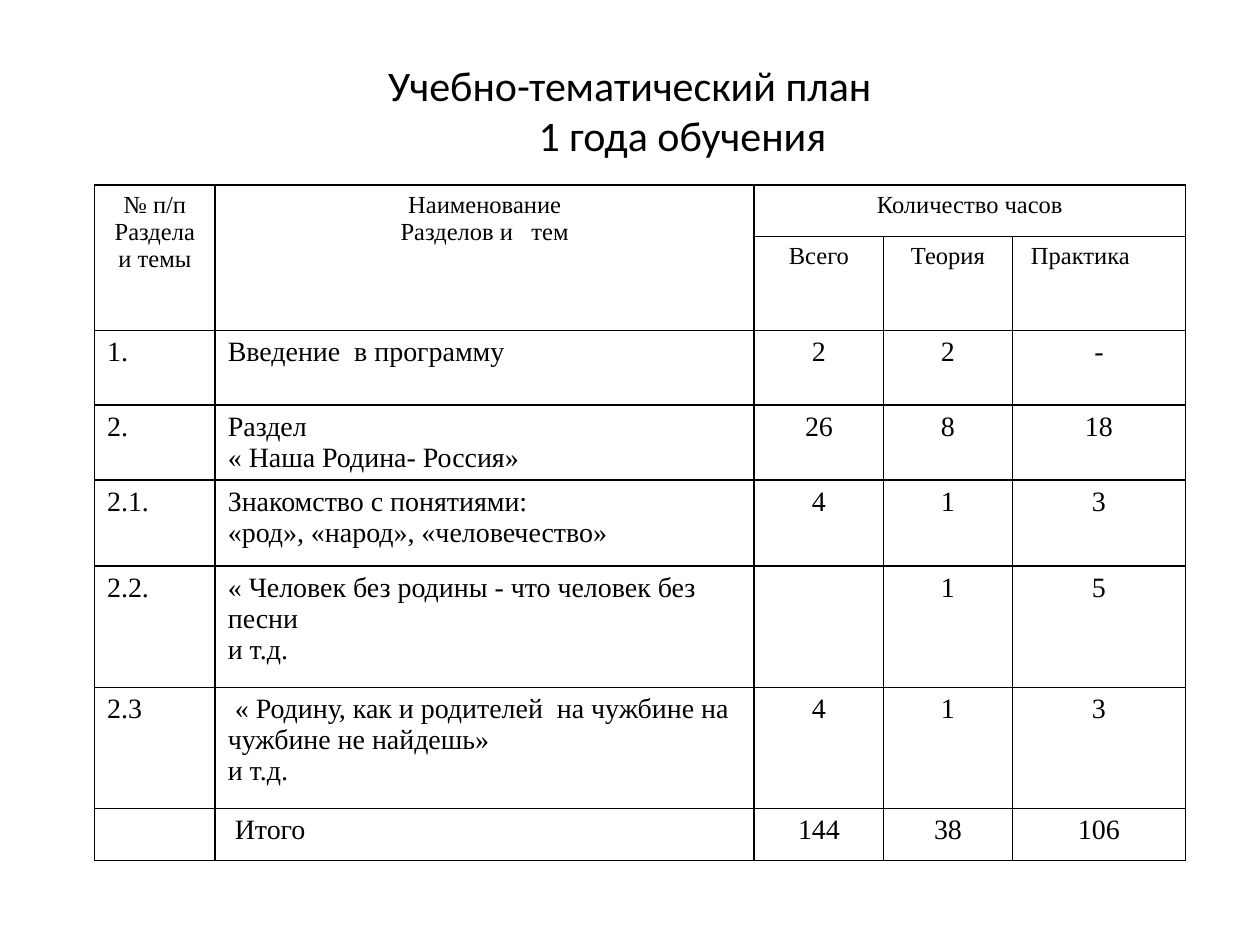
from lxml import etree
from pptx import Presentation
from pptx.dml.color import RGBColor
from pptx.enum.text import MSO_ANCHOR, PP_ALIGN
from pptx.oxml.ns import qn
from pptx.util import Pt

CENTER, LEFT = PP_ALIGN.CENTER, PP_ALIGN.LEFT
MIDDLE = MSO_ANCHOR.MIDDLE
BLACK = RGBColor(0, 0, 0)
TITLE_FONT, TABLE_FONT = "Calibri", "Times New Roman"
HEADER_SIZE, BODY_SIZE = 14, 16
TITLE_ONLY = 5

COLUMN_WIDTHS = [69, 308, 74, 73.5, 99]
ROW_HEIGHTS = [29.5, 53.5, 42.6, 42.8, 49.2, 69.3, 69.3, 29.6]
HEADER_ROWS = 2
MERGES = [((0, 0), (1, 0)), ((0, 1), (1, 1)), ((0, 2), (0, 4))]

# Each line of a cell is a paragraph of its own
PLAN = [
    ["№ п/п\nРаздела\nи темы", "Наименование\nРазделов и   тем", "Количество часов", "", ""],
    ["", "", "Всего", "Теория", " Практика"],
    ["1.", "Введение  в программу", "2", "2", "-"],
    ["2.", "Раздел\n« Наша Родина- Россия»", "26", "8", "18"],
    ["2.1.", "Знакомство с понятиями:\n«род», «народ», «человечество»", "4", "1", "3"],
    ["2.2.", "« Человек без родины - что человек без песни\nи т.д.", "", "1", "5"],
    ["2.3", " « Родину, как и родителей  на чужбине на чужбине не найдешь»\nи т.д.",
     "4", "1", "3"],
    ["", " Итого", "144", "38", "106"],
]


def add_lines(frame, lines, font, size, align):
    for index, line in enumerate(lines):
        paragraph = frame.add_paragraph() if index else frame.paragraphs[0]
        paragraph.alignment = align
        run = paragraph.add_run()
        run.text = line
        run.font.name = font
        run.font.size = Pt(size)
        run.font.color.rgb = BLACK


def set_borders(cell):
    properties = cell._tc.get_or_add_tcPr()
    for position, side in enumerate(("a:lnL", "a:lnR", "a:lnT", "a:lnB")):
        border = etree.Element(qn(side), w=str(Pt(1)))
        fill = etree.SubElement(border, qn("a:solidFill"))
        etree.SubElement(fill, qn("a:srgbClr"), val=str(BLACK))
        properties.insert(position, border)


def place_title(slide, left, top, width, height):
    title = slide.shapes.title
    title.left, title.top, title.width, title.height = map(Pt, (left, top, width, height))
    frame = title.text_frame
    frame.vertical_anchor = MIDDLE
    add_lines(frame, ["Учебно-тематический план", "1 года обучения"], TITLE_FONT, 24, CENTER)
    # The second line sits to the right of the centre
    frame.paragraphs[1]._p.get_or_add_pPr().set("marL", str(Pt(60)))


def place_plan(slide, left, top):
    table = slide.shapes.add_table(
        len(PLAN), len(COLUMN_WIDTHS), Pt(left), Pt(top),
        Pt(sum(COLUMN_WIDTHS)), Pt(sum(ROW_HEIGHTS))).table
    table.first_row = table.horz_banding = False
    for column, width in zip(table.columns, COLUMN_WIDTHS):
        column.width = Pt(width)
    for row, height in zip(table.rows, ROW_HEIGHTS):
        row.height = Pt(height)

    # Header groups
    for start, end in MERGES:
        table.cell(*start).merge(table.cell(*end))

    # Text, fill and grid
    for r, texts in enumerate(PLAN):
        is_header = r < HEADER_ROWS
        for c, text in enumerate(texts):
            cell = table.cell(r, c)
            cell.fill.background()
            set_borders(cell)
            centred = (is_header or c >= 2) and text != " Практика"
            if text:
                add_lines(cell.text_frame, text.split("\n"), TABLE_FONT,
                          HEADER_SIZE if is_header else BODY_SIZE,
                          CENTER if centred else LEFT)


def main():
    presentation = Presentation()
    presentation.slide_width, presentation.slide_height = Pt(720), Pt(540)
    slide = presentation.slides.add_slide(presentation.slide_layouts[TITLE_ONLY])
    place_title(slide, 54, 26, 612, 73.5)
    place_plan(slide, 54, 105.8)
    presentation.save("out.pptx")


if __name__ == "__main__":
    main()
